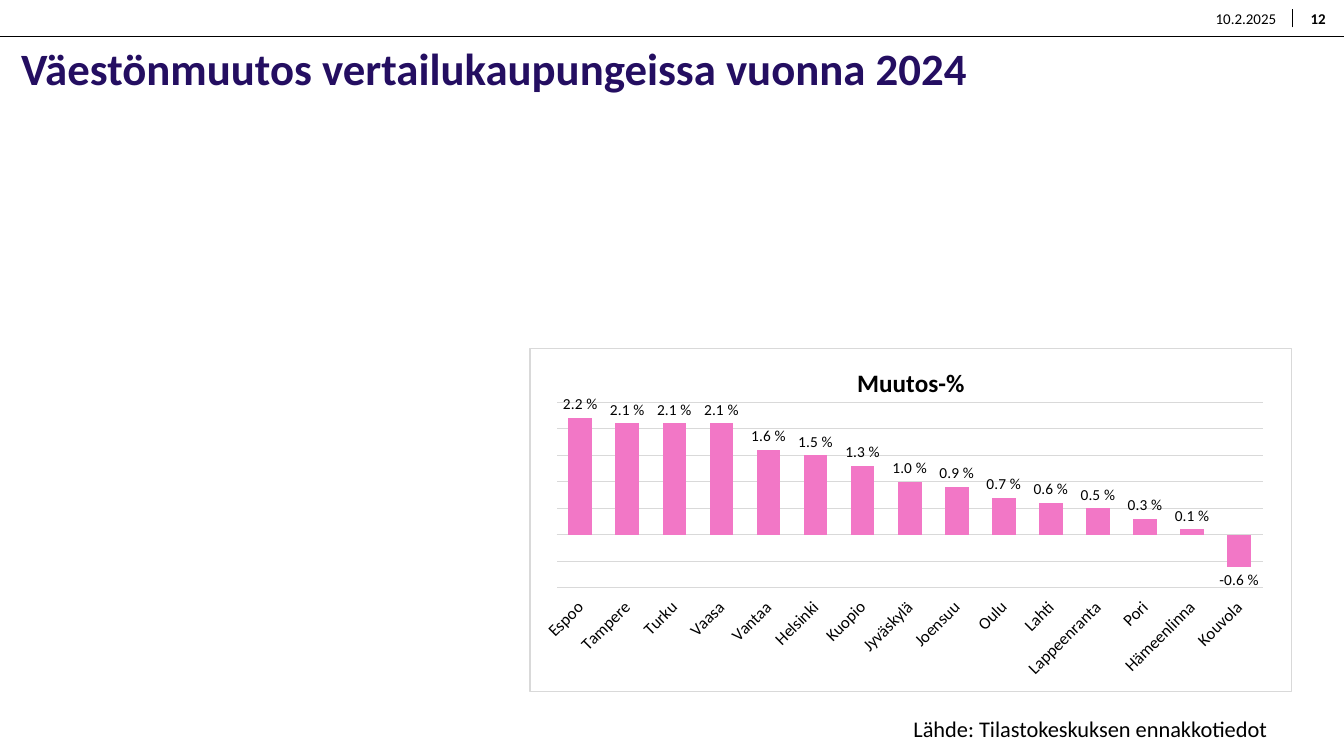
from lxml import etree
from pptx import Presentation
from pptx import util as u
from pptx.chart.data import CategoryChartData
from pptx.dml.color import RGBColor
from pptx.enum import chart as charts, shapes, text
from pptx.oxml import parse_xml
from pptx.oxml.ns import nsdecls, qn

Cm = u.Cm
COLOURS = {"ink": "000000", "title": "240E61", "bar": "F277C6",
           "grid": "D9D9D9", "paper": "FFFFFF"}
FONT = "Calibri"
PERCENT = "0.0\\ %"
CHANGES = {
    "Espoo": 0.022, "Tampere": 0.021, "Turku": 0.021, "Vaasa": 0.021,
    "Vantaa": 0.016, "Helsinki": 0.015, "Kuopio": 0.013, "Jyväskylä": 0.01,
    "Joensuu": 0.009, "Oulu": 0.007, "Lahti": 0.006, "Lappeenranta": 0.005,
    "Pori": 0.003, "Hämeenlinna": 0.001, "Kouvola": -0.006,
}


def colour(name):
    return RGBColor.from_string(COLOURS[name])


def set_font(font, size, name="ink", bold=False):
    font.name, font.size, font.bold = FONT, u.Pt(size), bold
    font.color.rgb = colour(name)


def set_line(line, name, width):
    line.color.rgb = colour(name)
    line.width = u.Pt(width)


def write(frame, words, size, name="ink", bold=False,
          align=text.PP_ALIGN.LEFT, anchor=text.MSO_ANCHOR.TOP):
    frame.word_wrap = True
    frame.auto_size = text.MSO_AUTO_SIZE.NONE
    frame.vertical_anchor = anchor
    para = frame.paragraphs[0]
    para.alignment = align
    span = para.add_run()
    span.text = words
    set_font(span.font, size, name, bold)
    return para


def add_text(page, words, box, size, inset=0, **style):
    frame = page.shapes.add_textbox(*map(Cm, box)).text_frame
    frame.margin_left = frame.margin_top = Cm(inset)
    frame.margin_right = frame.margin_bottom = 0
    write(frame, words, size, **style)


def add_rule(page, *ends):
    rule = page.shapes.add_connector(
        shapes.MSO_CONNECTOR.STRAIGHT, *map(Cm, ends))
    set_line(rule.line, "ink", 0.5)
    etree.SubElement(rule._element.spPr, qn("a:effectLst"))


def add_header(page, box):
    """Date and page number above a full-width rule."""
    left, top, width, height = box
    right, bottom = left + width, top + height
    number_width, date_width = 1.3, 2.34
    divider = right - number_width
    add_rule(page, left, bottom, right, bottom)
    add_rule(page, divider, top + height * 0.75, divider, top + height * 0.25)
    centred = {"align": text.PP_ALIGN.CENTER, "anchor": text.MSO_ANCHOR.MIDDLE}
    add_text(page, "10.2.2025", (divider - date_width, top, date_width, height),
             10.7, **centred)
    add_text(page, "12", (divider, top, number_width, height),
             10.7, bold=True, **centred)


def add_title(page, words, box):
    title = page.shapes.title
    title.left, title.top, title.width, title.height = map(Cm, box)
    para = write(title.text_frame, words, 32, "title", bold=True)
    para.line_spacing = 0.9


def frame_chart(chart, plot_box):
    """White background, thin border and a fixed inner plot area."""
    space = chart._chartSpace
    space.find(qn("c:chart")).addnext(parse_xml(
        f'<c:spPr {nsdecls("c", "a")}>'
        f'<a:solidFill><a:srgbClr val="{COLOURS["paper"]}"/></a:solidFill>'
        f'<a:ln w="{u.Pt(1)}"><a:solidFill>'
        f'<a:srgbClr val="{COLOURS["grid"]}"/></a:solidFill></a:ln></c:spPr>'))
    area = space.find(".//" + qn("c:plotArea"))
    for layout in area.findall(qn("c:layout")):
        area.remove(layout)
    modes = '<c:xMode val="edge"/><c:yMode val="edge"/>'
    sizes = "".join(f'<c:{key} val="{value}"/>'
                    for key, value in zip("xywh", plot_box))
    area.insert(0, parse_xml(
        f'<c:layout {nsdecls("c")}><c:manualLayout>'
        f'<c:layoutTarget val="inner"/>{modes}{sizes}'
        f'</c:manualLayout></c:layout>'))


def add_change_chart(page, box):
    data = CategoryChartData(number_format=PERCENT)
    data.categories = list(CHANGES)
    data.add_series("Muutos-%", list(CHANGES.values()))
    chart = page.shapes.add_chart(
        charts.XL_CHART_TYPE.COLUMN_CLUSTERED, *map(Cm, box), data).chart
    set_font(chart.font, 10)
    chart.has_legend = False
    chart.has_title = True
    write_title = chart.chart_title.text_frame.paragraphs[0].add_run()
    write_title.text = "Muutos-%"
    set_font(write_title.font, 18, bold=True)
    chart.chart_title.include_in_layout = False

    # Axes
    cities = chart.category_axis
    cities.tick_label_position = charts.XL_TICK_LABEL_POSITION.LOW
    cities.major_tick_mark = charts.XL_TICK_MARK.NONE
    set_font(cities.tick_labels.font, 12)
    set_line(cities.format.line, "grid", 0.75)
    cities._element.find(".//" + qn("a:bodyPr")).set("rot", "-2700000")
    scale = chart.value_axis
    scale.minimum_scale, scale.maximum_scale = -0.01, 0.025
    scale.major_unit = 0.005
    scale.has_major_gridlines = True
    set_line(scale.major_gridlines.format.line, "grid", 0.75)
    scale.visible = False

    # Columns and their labels
    plot = chart.plots[0]
    plot.gap_width = 99
    plot.vary_by_categories = False
    columns = plot.series[0]
    columns.invert_if_negative = False
    columns.format.fill.solid()
    columns.format.fill.fore_color.rgb = colour("bar")
    labels = columns.data_labels
    labels.show_value = True
    labels.number_format, labels.number_format_is_linked = PERCENT, False
    labels.position = charts.XL_LABEL_POSITION.OUTSIDE_END
    set_font(labels.font, 11)
    frame_chart(chart, (0.035, 0.156, 0.927, 0.541))


def main():
    deck = Presentation()
    deck.slide_width, deck.slide_height = Cm(33.87), Cm(19.05)
    page = deck.slides.add_slide(deck.slide_layouts.get_by_name("Title Only"))
    add_header(page, (0, 0, 33.87, 0.92))
    add_title(page, "Väestönmuutos vertailukaupungeissa\u00a0vuonna 2024",
              (0.28, 1.04, 33.58, 2.13))
    add_change_chart(page, (13.34, 8.77, 19.23, 8.68))
    add_text(page, "Lähde: Tilastokeskuksen ennakkotiedot",
             (22.94, 17.93, 10.9, 0.71), 16, inset=0.08)
    deck.save("out.pptx")


if __name__ == "__main__":
    main()
